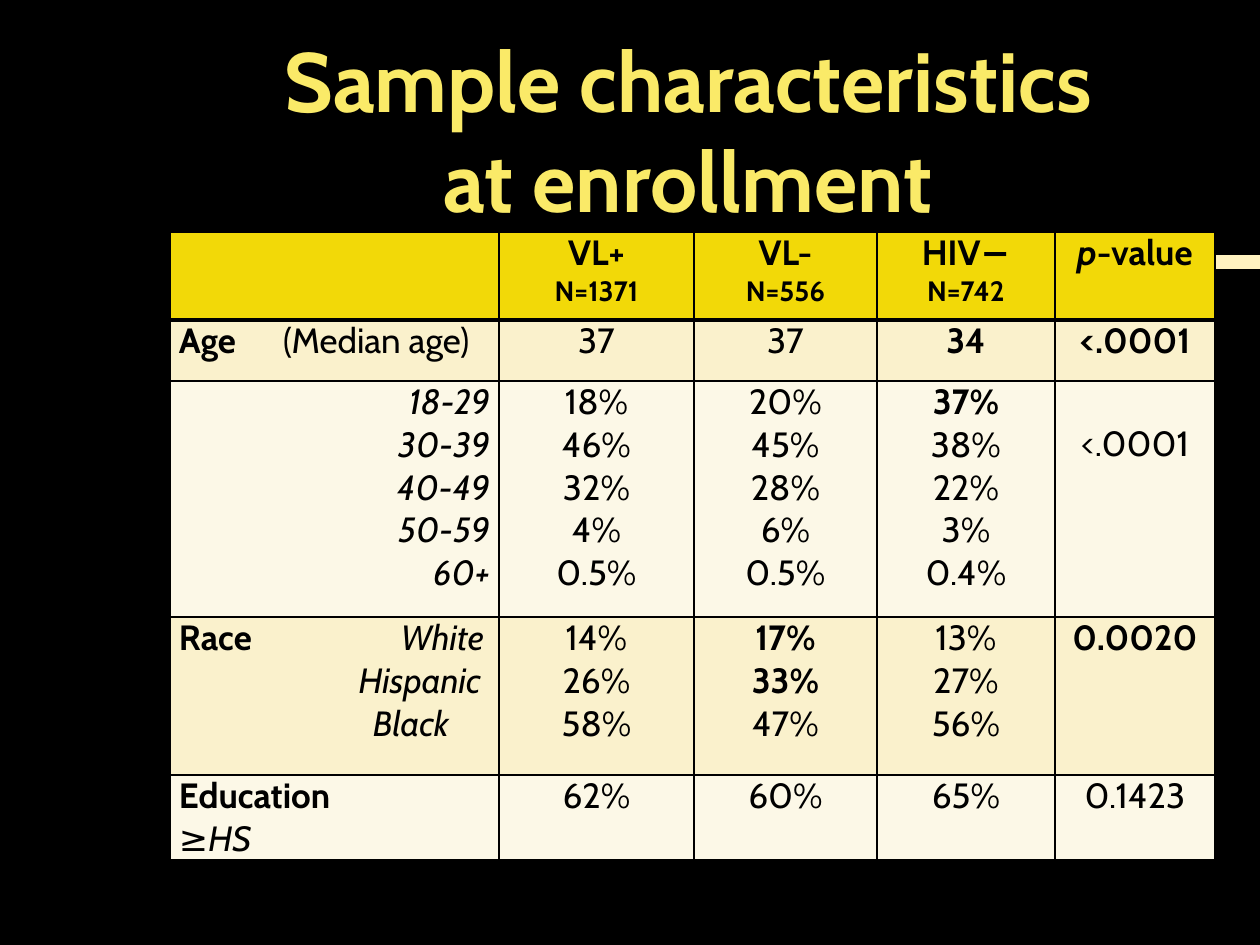
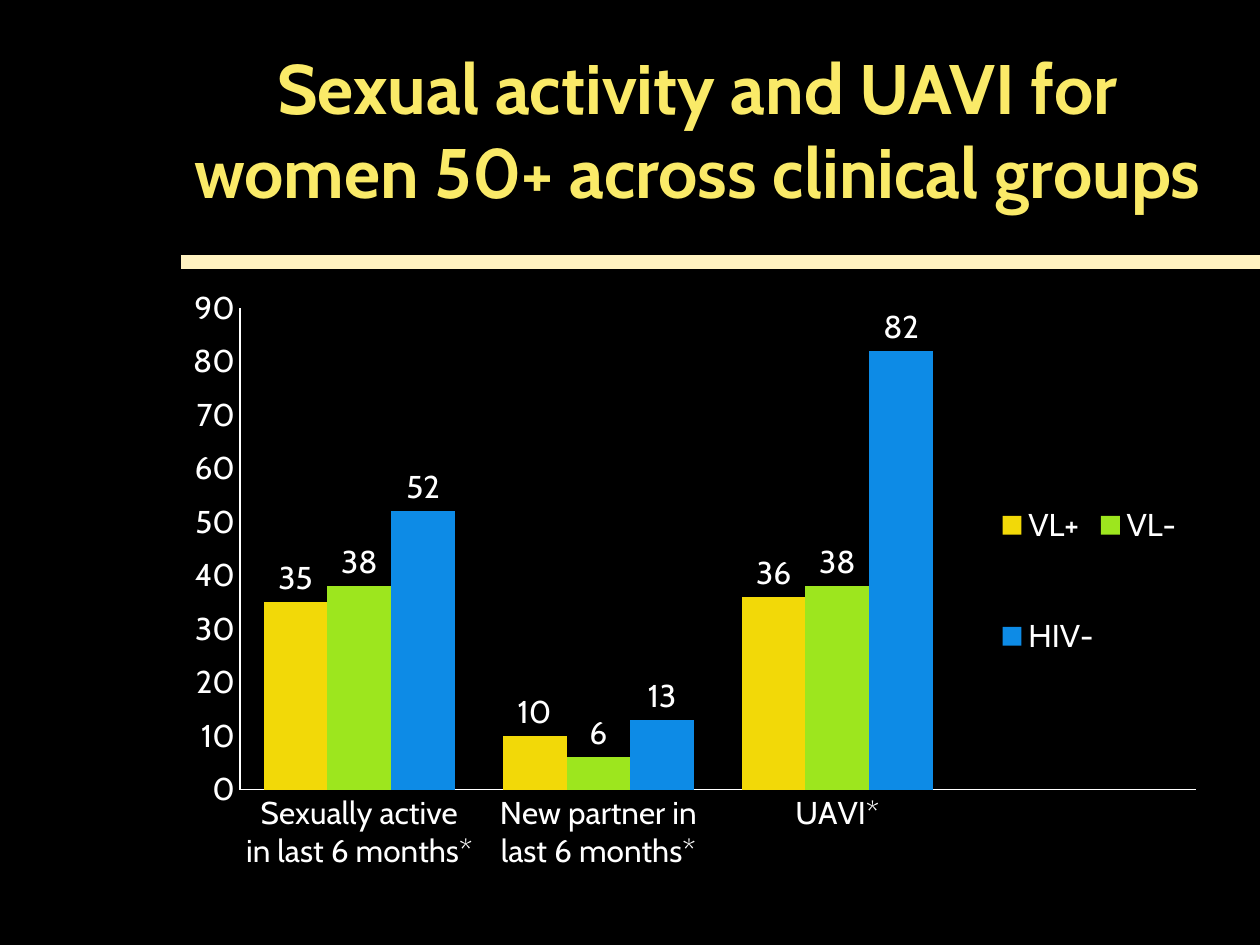
from lxml import etree
from pptx import Presentation
from pptx import util as u
from pptx.chart.data import CategoryChartData
from pptx.dml.color import RGBColor
from pptx.enum import chart as ch, shapes, text
from pptx.oxml import parse_xml
from pptx.oxml.ns import nsdecls, qn

FONT = "Cabin"
BLACK, WHITE = "000000", "FFFFFF"
TITLE, RULE = "FAEA68", "FFF2C0"
HEADER, DARK, LIGHT = "F2D908", "FAF1CC", "FCF8E7"
LEFT, CENTER, RIGHT = text.PP_ALIGN.LEFT, text.PP_ALIGN.CENTER, text.PP_ALIGN.RIGHT

TITLES = ["Sample characteristics \vat enrollment ",
          "Sexual activity and UAVI for women 50+ across clinical groups"]

# A cell is a list of paragraphs; a paragraph is text or a list of (text, style) runs.
HEADINGS = [[],
            [[("VL+", "b")], [("N=1371", "bs")]],
            [[("VL-", "b")], [("N=556", "bs")]],
            [[("HIV−", "b")], [("N=742", "bs")]],
            [[("p", "bi"), ("-value", "b")]]]
AGE = [[[("Age", "b"), ("\t(Median age)", "")]],
       ["37"], ["37"], [[("34", "b")]], [[("<.0001", "b")]]]
AGE_GROUPS = [[[(a, "i")] for a in ("18-29", "30-39", "40-49", "50-59", "60+")],
              ["18%", "46%", "32%", "4%", "0.5%"],
              ["20%", "45%", "28%", "6%", "0.5%"],
              [[("37%", "b")], "38%", "22%", "3%", "0.4%"],
              ["<.0001"]]
RACE = [[[("Race", "b"), ("\tWhite", "i")], [("\tHispanic", "i")], [("\tBlack", "i")]],
        ["14%", "26%", "58%"],
        [[("17%", "b")], [("33%", "b")], "47%"],
        ["13%", "27%", "56%"],
        [[("0.0020", "b")]]]
EDUCATION = [[[("Education", "b")], [("≥HS", "i")]],
             ["62%"], ["60%"], ["65%"], ["0.1423"]]

# cells, height, fill, alignment of the first column, its tab stops by paragraph
ROWS = [(HEADINGS, 88, HEADER, LEFT, []),
        (AGE, 61, DARK, LEFT, [(104, "l")]),
        (AGE_GROUPS, 236, LIGHT, RIGHT, []),
        (RACE, 158, DARK, LEFT, [(305, "r"), (302, "r"), (270, "r")]),
        (EDUCATION, 85, LIGHT, LEFT, [])]
COLUMNS = [329, 195, 183, 178, 160]
TABLE_AT = (170, 232)
INSET, TEXT_LINE = 9, 42

CATEGORIES = ["Sexually active in last 6 months*", "New partner in last 6 months*", "UAVI*", ""]
SERIES = [("VL+", (35, 10, 36, None), "F2D908"),
          ("VL-", (38, 6, 38, None), "9DE61E"),
          ("HIV-", (52, 13, 82, None), "0D8BE6")]
CHART_AT = (173, 276, 1045, 669)
PLOT_AT = (240, 308, 956, 482)
LEGEND_AT = (995, 433, 188, 295)


def px(n):
    return u.Emu(round(n * 914400 / 126))


def rgb(color):
    return RGBColor.from_string(color)


def write(tf, paragraphs, size=20, color=BLACK, align=CENTER, style="", tabs=()):
    """Fill a text frame; style letters are b bold, i italic, s small."""
    tf.word_wrap = True
    for n, runs in enumerate(paragraphs):
        p = tf.paragraphs[0] if n == 0 else tf.add_paragraph()
        p.alignment = align
        if n < len(tabs):
            pos, kind = tabs[n]
            stops = etree.SubElement(p._p.get_or_add_pPr(), qn("a:tabLst"))
            etree.SubElement(stops, qn("a:tab"), pos=str(px(pos)), algn=kind)
        for words, marks in [(runs, style)] if isinstance(runs, str) else runs:
            for k, part in enumerate(words.split("\v")):
                if k:
                    p.add_line_break()
                r = p.add_run()
                r.text = part
                r.font.name, r.font.size = FONT, u.Pt(16 if "s" in marks else size)
                r.font.bold, r.font.italic = "b" in marks, "i" in marks
                r.font.color.rgb = rgb(color)


def add_slide(prs, title, size):
    s = prs.slides.add_slide(prs.slide_layouts[6])
    s.background.fill.solid()
    s.background.fill.fore_color.rgb = rgb(BLACK)
    rule = s.shapes.add_connector(shapes.MSO_CONNECTOR.STRAIGHT,
                                  px(181), px(262), px(1260), px(262))
    rule.line.color.rgb = rgb(RULE)
    rule.line.width = u.Pt(8.25)
    etree.SubElement(rule._element.spPr, qn("a:effectLst"))
    tf = s.shapes.add_textbox(px(175), px(15), px(1045), px(228)).text_frame
    tf.vertical_anchor = text.MSO_ANCHOR.MIDDLE
    write(tf, [title], size=size, color=TITLE, style="b")
    return s


def set_borders(cell, **widths):
    """Draw the sides L, R, T, B; widths are in points."""
    tcPr = cell._tc.get_or_add_tcPr()
    for n, side in enumerate("LRTB"):
        tcPr.insert(n, parse_xml(
            f'<a:ln{side} {nsdecls("a")} w="{u.Pt(widths.get(side, 1))}"><a:solidFill>'
            f'<a:srgbClr val="{BLACK}"/></a:solidFill></a:ln{side}>'))


def add_sample_table(s):
    heights = [row[1] for row in ROWS]
    table = s.shapes.add_table(len(ROWS), len(COLUMNS), *map(px, TABLE_AT),
                               px(sum(COLUMNS)), px(sum(heights))).table
    for column, width in zip(table.columns, COLUMNS):
        column.width = px(width)
    for i, (cells, height, fill, label_align, tabs) in enumerate(ROWS):
        table.rows[i].height = px(height)
        for j, paragraphs in enumerate(cells):
            cell = table.cell(i, j)
            cell.margin_left = cell.margin_right = px(INSET)
            cell.margin_top = cell.margin_bottom = 0
            cell.fill.solid()
            cell.fill.fore_color.rgb = rgb(fill)
            set_borders(cell, **({"B": 3} if i == 0 else {"T": 3} if i == 1 else {}))
            write(cell.text_frame, paragraphs, align=CENTER if j else label_align,
                  tabs=() if j else tabs)
    # The p-value of the age groups stands beside the second group
    table.cell(2, 4).margin_top = px(TEXT_LINE)


def layout_xml(box, inner=False):
    """Manual chart layout for a box given in slide px."""
    left, top, width, height = CHART_AT
    x, y, w, h = box
    shares = zip("xywh", ((x - left) / width, (y - top) / height, w / width, h / height))
    target = '<c:layoutTarget val="inner"/>' if inner else ""
    modes = '<c:xMode val="edge"/><c:yMode val="edge"/>'
    sizes = "".join(f'<c:{k} val="{v:.3f}"/>' for k, v in shares)
    return parse_xml(f'<c:layout {nsdecls("c")}><c:manualLayout>{target}{modes}{sizes}'
                     '</c:manualLayout></c:layout>')


def add_activity_chart(s):
    data = CategoryChartData()
    data.categories = CATEGORIES
    for name, values, _ in SERIES:
        data.add_series(name, values)
    chart = s.shapes.add_chart(ch.XL_CHART_TYPE.COLUMN_CLUSTERED,
                               *map(px, CHART_AT), data).chart
    chart.has_title = False
    chart.font.name, chart.font.size = FONT, u.Pt(18)
    chart.font.color.rgb = rgb(WHITE)

    plot = chart.plots[0]
    plot.gap_width, plot.overlap, plot.vary_by_categories = 75, 0, False
    for series, (_, _, color) in zip(plot.series, SERIES):
        series.format.fill.solid()
        series.format.fill.fore_color.rgb = rgb(color)
    plot.has_data_labels = True
    plot.data_labels.show_value = True
    plot.data_labels.position = ch.XL_LABEL_POSITION.OUTSIDE_END

    for axis, width in ((chart.category_axis, 0.75), (chart.value_axis, 1.5)):
        axis.major_tick_mark = axis.minor_tick_mark = ch.XL_TICK_MARK.NONE
        axis.has_major_gridlines = False
        axis.format.line.color.rgb = rgb(WHITE)
        axis.format.line.width = u.Pt(width)
    chart.value_axis.minimum_scale, chart.value_axis.maximum_scale = 0, 90
    chart.value_axis.major_unit = 10

    chart.has_legend = True
    legend = chart.legend
    legend.position = ch.XL_LEGEND_POSITION.BOTTOM
    legend.include_in_layout = True
    area = chart._chartSpace.chart.plotArea
    for parent, old in ((area, area.find(qn("c:layout"))),
                        (legend._element, legend._element.find(qn("c:layout")))):
        if old is not None:
            parent.remove(old)
    area.insert(0, layout_xml(PLOT_AT, inner=True))
    legend._element.find(qn("c:legendPos")).addnext(layout_xml(LEGEND_AT))


def main():
    prs = Presentation()
    prs.slide_width, prs.slide_height = px(1260), px(945)
    add_sample_table(add_slide(prs, TITLES[0], 48))
    add_activity_chart(add_slide(prs, TITLES[1], 40))
    prs.save("out.pptx")


if __name__ == "__main__":
    main()
